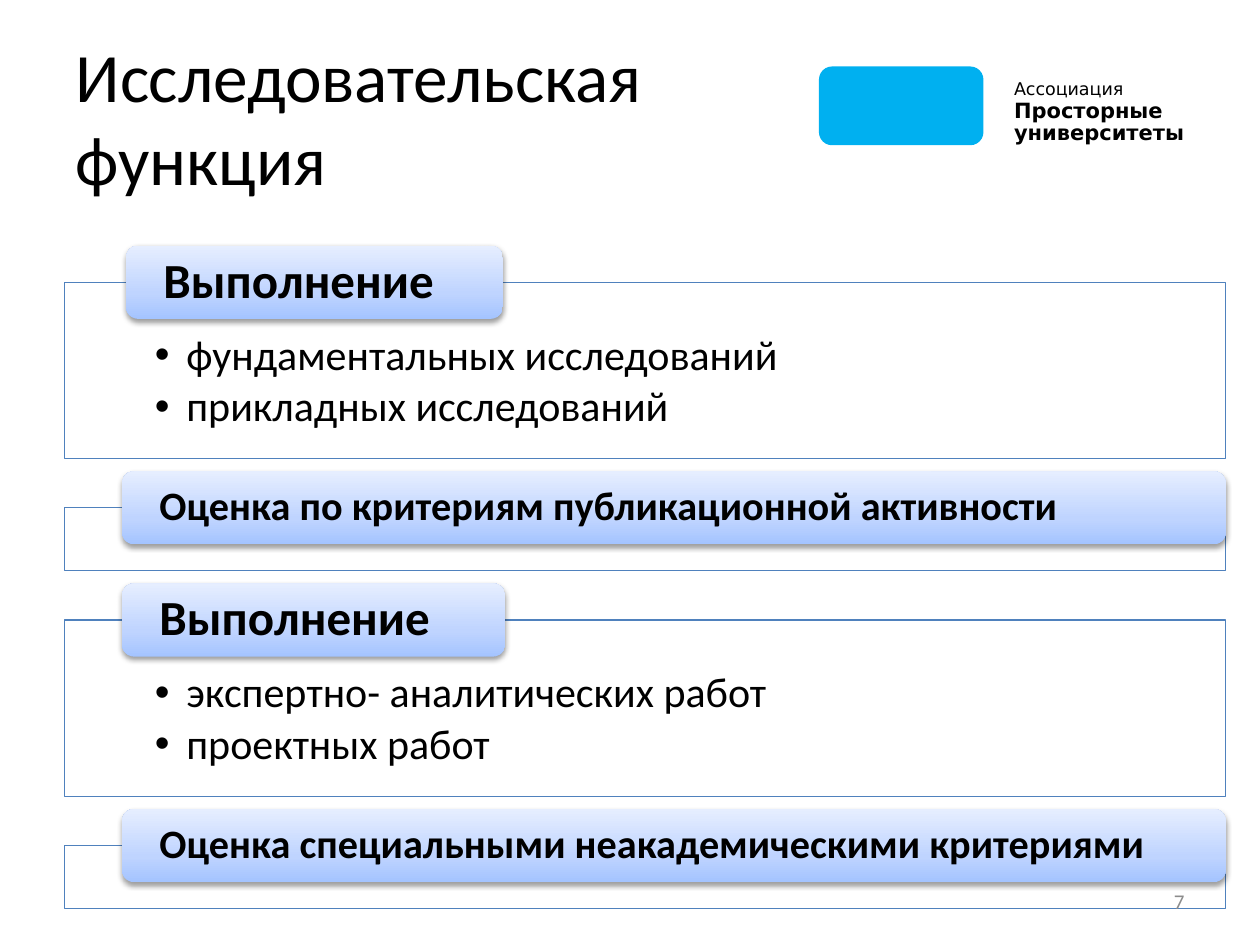
from lxml import etree
from pptx import Presentation
from pptx.dml.color import RGBColor
from pptx.enum import shapes, text
from pptx.oxml import ns
from pptx.util import Pt

BLACK = RGBColor(0x00, 0x00, 0x00)
WHITE = RGBColor(0xFF, 0xFF, 0xFF)
GREY = RGBColor(0x8C, 0x8C, 0x8C)
FRAME_BLUE = RGBColor(0x4F, 0x81, 0xBD)
LOGO_BLUE = RGBColor(0x00, 0xB0, 0xF0)
LABEL_STOPS = [
    (0, RGBColor(0xA4, 0xC4, 0xFF)),
    (35, RGBColor(0xBF, 0xD4, 0xFF)),
    (100, RGBColor(0xE6, 0xEE, 0xFF)),
]

FRAME_LEFT, FRAME_TOP, FRAME_WIDTH, FRAME_GAP = 36.7, 161.3, 663.8, 28.1
LABEL_HEIGHT, LABEL_RISE = 41.8, 20.9

# heading, size, label left, label width, frame height, list items
SECTIONS = [
    ("Выполнение", 28, 72, 215.3, 100.8,
     ["фундаментальных исследований", "прикладных исследований"]),
    ("Оценка по критериям публикационной активности", 23, 69.8, 630.7, 36, []),
    ("Выполнение", 28, 69.8, 218.9, 100.8,
     ["экспертно- аналитических работ", "проектных работ"]),
    ("Оценка специальными неакадемическими критериями", 23, 69.8, 630.7, 36, []),
]


def sub(parent, tag, **attributes):
    return etree.SubElement(parent, ns.qn(tag), attributes)


def place(shape, left, top, width, height):
    shape.left, shape.top = Pt(left), Pt(top)
    shape.width, shape.height = Pt(width), Pt(height)


def set_insets(frame, left, top, right, bottom):
    frame.margin_left, frame.margin_top = Pt(left), Pt(top)
    frame.margin_right, frame.margin_bottom = Pt(right), Pt(bottom)


def add_run(paragraph, words, size, color=BLACK, bold=False, font="Calibri"):
    run = paragraph.add_run()
    run.text = words
    run.font.name, run.font.size, run.font.bold = font, Pt(size), bold
    run.font.color.rgb = color


def paragraph_at(frame, index):
    return frame.paragraphs[0] if index == 0 else frame.add_paragraph()


def fill_title(title, lines):
    place(title, 36, 21.6, 648, 90)
    frame = title.text_frame
    frame.auto_size = text.MSO_AUTO_SIZE.NONE
    frame.vertical_anchor = text.MSO_ANCHOR.MIDDLE
    heading = frame.paragraphs[0]
    heading.alignment = text.PP_ALIGN.LEFT
    for index, line in enumerate(lines):
        if index:
            heading.add_line_break()
        add_run(heading, line, 39.6)


def style_frame(frame_shape):
    """Give the section's outline box a nearly opaque white fill."""
    frame_shape.fill.solid()
    frame_shape.fill.fore_color.rgb = WHITE
    white = frame_shape.fill._xPr.find(".//" + ns.qn("a:srgbClr"))
    sub(white, "a:alpha", val="90000")
    frame_shape.line.color.rgb = FRAME_BLUE
    frame_shape.line.width = Pt(0.75)


def fill_list(body, items):
    frame = body.text_frame
    frame.auto_size = text.MSO_AUTO_SIZE.NONE
    frame.vertical_anchor = text.MSO_ANCHOR.TOP
    set_insets(frame, 51.8, 29.5, 51.8, 13.7)
    for index, words in enumerate(items):
        item = paragraph_at(frame, index)
        item.level = 1
        item.line_spacing = 0.9
        item.space_before, item.space_after = Pt(0), Pt(3.6)
        properties = item._p.get_or_add_pPr()
        properties.set("marL", str(Pt(18)))
        properties.set("indent", str(-Pt(18)))
        sub(properties, "a:buFont", typeface="Arial")
        sub(properties, "a:buChar", char="•")
        add_run(item, words, 24)


def add_label(slide, words, size, left, top, width):
    label = slide.shapes.add_shape(
        shapes.MSO_SHAPE.ROUNDED_RECTANGLE,
        Pt(left), Pt(top), Pt(width), Pt(LABEL_HEIGHT))
    label.line.fill.background()
    label.fill.gradient()
    label.fill.gradient_angle = 90
    stops = label._element.spPr.find(".//" + ns.qn("a:gsLst"))
    for stop in list(stops):
        stops.remove(stop)
    for position, color in LABEL_STOPS:
        stop = sub(stops, "a:gs", pos=str(position * 1000))
        sub(stop, "a:srgbClr", val=str(color))

    label.shadow.inherit = False
    effects = label._element.spPr.find(ns.qn("a:effectLst"))
    shadow = sub(effects, "a:outerShdw", blurRad=str(Pt(3.1)),
                 dist=str(Pt(1.6)), dir="5400000", rotWithShape="0")
    sub(sub(shadow, "a:srgbClr", val=str(BLACK)), "a:alpha", val="38000")

    frame = label.text_frame
    frame.word_wrap = True
    frame.vertical_anchor = text.MSO_ANCHOR.MIDDLE
    set_insets(frame, 19.3, 2, 19.3, 2)
    heading = frame.paragraphs[0]
    heading.alignment = text.PP_ALIGN.LEFT
    heading.line_spacing = 0.9
    add_run(heading, words, size, bold=True)


def add_sections(slide, bodies):
    top = FRAME_TOP
    for words, size, left, width, height, items in SECTIONS:
        if items:
            frame_shape = next(bodies)
            fill_list(frame_shape, items)
        else:
            frame_shape = slide.shapes.add_shape(
                shapes.MSO_SHAPE.RECTANGLE, 0, 0, 0, 0)
            frame_shape.shadow.inherit = False
        place(frame_shape, FRAME_LEFT, top, FRAME_WIDTH, height)
        style_frame(frame_shape)
        add_label(slide, words, size, left, top - LABEL_RISE, width)
        top += height + FRAME_GAP


def add_text_box(slide, left, top, width, height):
    box = slide.shapes.add_textbox(Pt(left), Pt(top), Pt(width), Pt(height))
    box.text_frame.word_wrap = True
    return box.text_frame


def add_association(slide):
    emblem = slide.shapes.add_shape(
        shapes.MSO_SHAPE.ROUNDED_RECTANGLE, Pt(468), Pt(38), Pt(94), Pt(45))
    emblem.shadow.inherit = False
    emblem.fill.solid()
    emblem.fill.fore_color.rgb = LOGO_BLUE
    emblem.line.fill.background()

    name = add_text_box(slide, 572.4, 40.3, 116, 48.2)
    lines = [("Ассоциация", 10, False), ("Просторные", 12, True),
             ("университеты", 12, True)]
    for index, (words, size, bold) in enumerate(lines):
        line = paragraph_at(name, index)
        line.line_spacing = Pt(13)
        add_run(line, words, size, bold=bold, font="DejaVu Sans")


def add_page_number(slide, number):
    frame = add_text_box(slide, 516, 500.5, 168, 28.8)
    frame.vertical_anchor = text.MSO_ANCHOR.MIDDLE
    frame.paragraphs[0].alignment = text.PP_ALIGN.RIGHT
    add_run(frame.paragraphs[0], number, 12, GREY)


def main():
    deck = Presentation()
    deck.slide_width, deck.slide_height = Pt(720), Pt(540)
    two_content = deck.slide_layouts[3]
    slide = deck.slides.add_slide(two_content)
    title, *bodies = slide.placeholders
    add_association(slide)
    fill_title(title, ["Исследовательская", "функция"])
    add_sections(slide, iter(bodies))
    add_page_number(slide, "7")
    deck.save("out.pptx")


if __name__ == "__main__":
    main()
